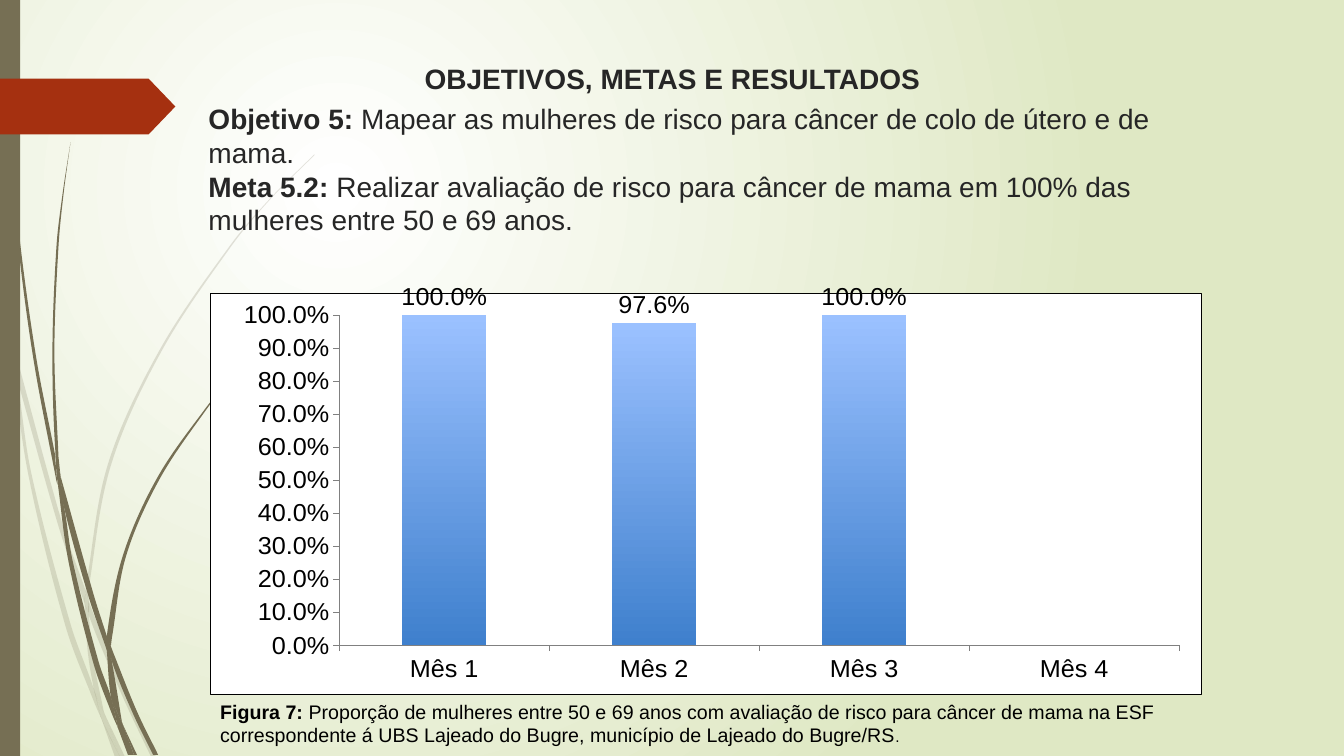
from lxml import etree
from pptx import Presentation
from pptx import util as u
from pptx.chart import data as cd
from pptx.dml.color import RGBColor
from pptx.enum import chart as ch, shapes, text
from pptx.oxml import parse_xml
from pptx.oxml.ns import nsdecls, qn

COLORS = {"olive": "766F54", "red": "A53010", "ink": "262626", "black": "000000",
          "white": "FFFFFF", "sage": "DFE8C4", "axis": "808080",
          "bar_top": "9BC1FF", "bar_base": "3F80CD"}
FONT = "Arial"
UNIT = u.Cm(2.54) / 100  # grass coordinates are hundredths of an inch

# Each blade is a pair of edges: out along one side, back along the other.
PALE_GRASS = [
    ([(11, 350), (9, 322), (0, 282)], [(0, 299), (10, 344), (11, 350)]),
    ([(17, 376), (58, 522), (84, 599)], [(85, 586), (62, 520), (14, 345)]),
    ([(88, 596), (88, 610), (123, 694), (150, 751)],
     [(155, 751), (127, 692), (92, 607), (88, 596)]),
    ([(105, 711), (119, 751)], [(124, 751), (105, 711)]),
    ([(11, 350), (28, 470), (65, 621), (92, 693), (101, 714)],
     [(99, 707), (93, 683), (70, 619), (31, 469), (17, 376), (11, 350)]),
    ([(84, 599), (87, 646), (93, 683), (96, 692), (105, 711)],
     [(103, 706), (91, 646), (88, 610), (84, 599)]),
    ([(88, 596), (88, 584), (110, 462), (160, 349), (229, 245), (268, 198), (312, 154)],
     [(312, 153), (268, 197), (228, 244), (158, 348), (107, 461), (85, 584), (85, 586)]),
    ([(101, 714), (114, 751)], [(119, 751), (101, 714)]),
    ([(85, 586), (84, 599), (88, 608)], [(88, 610), (88, 596), (85, 586)]),
    ([(93, 683), (99, 707), (101, 714), (119, 751)], [(105, 711), (96, 692), (93, 683)]),
]
DARK_GRASS = [
    ([(3, 0), (4, 48), (7, 110), (17, 233), (33, 355), (56, 477), (57, 481)],
     [(55, 457), (55, 453), (36, 355), (19, 232), (8, 109), (5, 48), (4, 0)]),
    ([(60, 472), (64, 505), (88, 592), (106, 645)], [(106, 631), (93, 590), (60, 472)]),
    ([(110, 641), (111, 656), (132, 708), (152, 749)],
     [(157, 749), (136, 706), (113, 649), (110, 641)]),
    ([(57, 477), (68, 557), (93, 659), (111, 708), (117, 722)],
     [(116, 717), (110, 691), (98, 657), (72, 556), (64, 505), (57, 477)]),
    ([(70, 141), (62, 193), (56, 245), (52, 349), (55, 449), (60, 472)],
     [(58, 453), (54, 349), (58, 245), (63, 193), (70, 141)]),
    ([(122, 719), (133, 749)], [(136, 749), (122, 719)]),
    ([(55, 449), (57, 477), (64, 505)], [(60, 472), (55, 449)]),
    ([(260, 344), (231, 373), (204, 405), (156, 474), (122, 551), (106, 631), (110, 641)],
     [(111, 633), (125, 552), (158, 476), (205, 406), (231, 374), (261, 344)]),
    ([(117, 722), (127, 749)], [(131, 749), (117, 722)]),
    ([(106, 645), (110, 691), (116, 706), (122, 719)],
     [(121, 716), (111, 656), (109, 651), (106, 645)]),
    ([(106, 631), (106, 645), (111, 656)], [(110, 641), (106, 631)]),
    ([(110, 691), (116, 717), (117, 722), (130, 749)],
     [(133, 749), (122, 719), (116, 706), (110, 691)]),
]


def rgb(name):
    return RGBColor.from_string(COLORS[name])


def set_attrs(obj, **values):
    for name, value in values.items():
        setattr(obj, name, value)


def paint(sp, color):
    sp.shadow.inherit = False
    sp.fill.solid()
    sp.fill.fore_color.rgb = rgb(color)
    sp.line.fill.background()


def set_gradient(fill, *colors):
    fill.gradient()
    for i, (stop, color) in enumerate(zip(fill.gradient_stops, colors)):
        stop.color.rgb = rgb(color)
        stop.position = i


def curve_segments(pts):
    """Return (control, control, end) for a smooth curve through complex points."""
    tangents = []
    for i in range(len(pts)):
        near = pts[max(i - 1, 0):i + 2]
        tangents.append((near[-1] - near[0]) / sum(abs(b - a) for a, b in zip(near, near[1:])))
    return [(a + ta * abs(b - a) / 3, b - tb * abs(b - a) / 3, b)
            for a, b, ta, tb in zip(pts, pts[1:], tangents, tangents[1:])]


def add_blade(slide, left, top, out, back):
    out, back = ([complex(left + x * UNIT, top + y * UNIT) for x, y in edge]
                 for edge in (out, back))
    pts = out + back
    builder = slide.shapes.build_freeform(pts[0].real, pts[0].imag)
    builder.add_line_segments([(z.real, z.imag) for z in pts[1:]], close=True)
    sp = builder.convert_to_shape()
    origin = complex(sp.left, sp.top)
    lines = list(sp._element.iter(qn("a:lnTo")))
    segments = curve_segments(out) + [None] + curve_segments(back)
    for line, segment in zip(lines, segments):
        if segment:
            bend = etree.Element(qn("a:cubicBezTo"))
            for z in segment:
                z -= origin
                etree.SubElement(bend, qn("a:pt"), x=str(round(z.real)), y=str(round(z.imag)))
            line.getparent().replace(line, bend)
    return sp


def add_grass(slide, left, top, blades, alpha=None):
    for out, back in blades:
        sp = add_blade(slide, left, top, out, back)
        paint(sp, "olive")
        if alpha:
            clr = sp._element.spPr.find(".//" + qn("a:srgbClr"))
            etree.SubElement(clr, qn("a:alpha"), val=str(alpha * 1000))


def add_backdrop(slide, left, top, height):
    set_gradient(slide.background.fill, "white", "sage")
    grad = slide._element.find(".//" + qn("a:gradFill"))
    grad.replace(grad.find(qn("a:lin")), parse_xml(
        f'<a:path {nsdecls("a")} path="circle">'
        '<a:fillToRect l="50000" t="50000" r="100000" b="100000"/></a:path>'))
    add_grass(slide, left, top, PALE_GRASS, alpha=20)
    add_grass(slide, left, top, DARK_GRASS)
    stripe = slide.shapes.add_shape(shapes.MSO_SHAPE.RECTANGLE, left, top, u.Cm(0.51), height)
    paint(stripe, "olive")
    arrow = slide.shapes.add_shape(shapes.MSO_SHAPE.PENTAGON, left, top + u.Cm(1.98),
                                   u.Cm(4.42), u.Cm(1.41))
    arrow.adjustments[0] = 0.48
    paint(arrow, "red")


def write(sp, lines, size, color, align=text.PP_ALIGN.LEFT, anchor=text.MSO_ANCHOR.TOP):
    """Fill one paragraph; each line is a list of (words, bold) pairs."""
    tf = sp.text_frame
    set_attrs(tf, word_wrap=True, vertical_anchor=anchor, auto_size=text.MSO_AUTO_SIZE.NONE)
    p = tf.paragraphs[0]
    p.alignment = align
    for i, line in enumerate(lines):
        if i:
            p.add_line_break()
        for words, bold in line:
            r = p.add_run()
            r.text = words
            set_attrs(r.font, name=FONT, size=u.Pt(size), bold=bold)
            r.font.color.rgb = rgb(color)
    return p


def add_goal(slide, left, top, width, height):
    title = slide.shapes.title
    set_attrs(title, left=left, top=top, width=width, height=height)
    slide.shapes._spTree.append(title._element)  # bring above the backdrop
    write(title, [
        [("Objetivo 5:", True),
         (" Mapear as mulheres de risco para câncer de colo de útero e de mama.", False)],
        [("Meta 5.2: ", True),
         ("Realizar avaliação de risco para câncer de mama em 100% das mulheres "
          "entre 50 e 69 anos.", False)]], 20, "ink")


def add_result_chart(slide, left, top, width, height):
    data = cd.CategoryChartData(number_format="0.0%")
    data.categories = ["Mês 1", "Mês 2", "Mês 3", "Mês 4"]
    data.add_series("Series 1", [1, 0.976, 1, 0])
    chart = slide.shapes.add_chart(ch.XL_CHART_TYPE.COLUMN_CLUSTERED,
                                   left, top, width, height, data).chart
    set_attrs(chart, has_legend=False, has_title=False)
    set_attrs(chart.font, name=FONT, size=u.Pt(18))
    chart.font.color.rgb = rgb("black")
    for axis in (chart.category_axis, chart.value_axis):
        set_attrs(axis, has_major_gridlines=False, major_tick_mark=ch.XL_TICK_MARK.OUTSIDE)
        axis.format.line.width = u.Pt(0.25)
        axis.format.line.color.rgb = rgb("axis")
    set_attrs(chart.value_axis, minimum_scale=0, maximum_scale=1, major_unit=0.1)
    set_attrs(chart.value_axis.tick_labels, number_format="0.0%", number_format_is_linked=False)

    plot = chart.plots[0]
    set_attrs(plot, gap_width=150, vary_by_categories=False)
    bars = plot.series[0]
    set_gradient(bars.format.fill, "bar_top", "bar_base")
    bars.format.fill.gradient_angle = 270
    labels = bars.data_labels
    set_attrs(labels, show_value=True, number_format="0.0%", number_format_is_linked=False,
              position=ch.XL_LABEL_POSITION.OUTSIDE_END)
    labels._element.insert(0, parse_xml(
        f'<c:dLbl {nsdecls("c")}><c:idx val="3"/><c:delete val="1"/></c:dLbl>'))

    area = chart._chartSpace.chart.plotArea
    for layout in area.findall(qn("c:layout")):
        area.remove(layout)
    box = {"x": 0.13, "y": 0.053, "w": 0.848, "h": 0.825}
    area.insert(0, parse_xml(
        f'<c:layout {nsdecls("c")}><c:manualLayout><c:layoutTarget val="inner"/>'
        '<c:xMode val="edge"/><c:yMode val="edge"/>'
        + "".join(f'<c:{k} val="{v}"/>' for k, v in box.items())
        + '</c:manualLayout></c:layout>'))
    white = f'<a:solidFill><a:srgbClr val="{COLORS["white"]}"/></a:solidFill>'
    border = (f'<a:ln w="{u.Pt(0.25)}"><a:solidFill><a:srgbClr val="{COLORS["black"]}"/>'
              '</a:solidFill></a:ln>')
    sp_pr = f'<c:spPr {nsdecls("c", "a")}>{white}%s</c:spPr>'
    area.append(parse_xml(sp_pr % ""))
    chart._chartSpace.chart.addnext(parse_xml(sp_pr % border))


def add_heading(slide, left, top, width, height):
    sp = slide.shapes.add_textbox(left, top, width, height)
    write(sp, [[("OBJETIVOS, METAS E RESULTADOS", True)]], 20, "ink",
          text.PP_ALIGN.CENTER, text.MSO_ANCHOR.MIDDLE)


def add_caption(slide, left, top, width, height):
    sp = slide.shapes.add_textbox(left, top, width, height)
    p = write(sp, [[
        ("Figura 7:", True),
        (" Proporção de mulheres entre 50 e 69 anos com avaliação de risco para câncer de mama "
         "na ESF correspondente á UBS Lajeado do Bugre, município de Lajeado do Bugre/RS", False),
        (".", False)]], 14, "black")
    p.runs[-1].font.size = u.Pt(11)


def main():
    prs = Presentation()
    set_attrs(prs, slide_width=u.Cm(33.87), slide_height=u.Cm(19.05))
    slide = prs.slides.add_slide(prs.slide_layouts[5])
    add_backdrop(slide, 0, 0, prs.slide_height)
    add_goal(slide, u.Cm(5), u.Cm(2.44), u.Cm(25.27), u.Cm(3.91))
    add_result_chart(slide, u.Cm(5.3), u.Cm(7.14), u.Cm(24.97), u.Cm(10.36))
    add_heading(slide, u.Cm(3.61), 0, u.Cm(26.67), u.Cm(3.96))
    add_caption(slide, u.Cm(5.3), u.Cm(17.5), u.Cm(25.32), u.Cm(1.45))
    prs.save("out.pptx")


if __name__ == "__main__":
    main()
